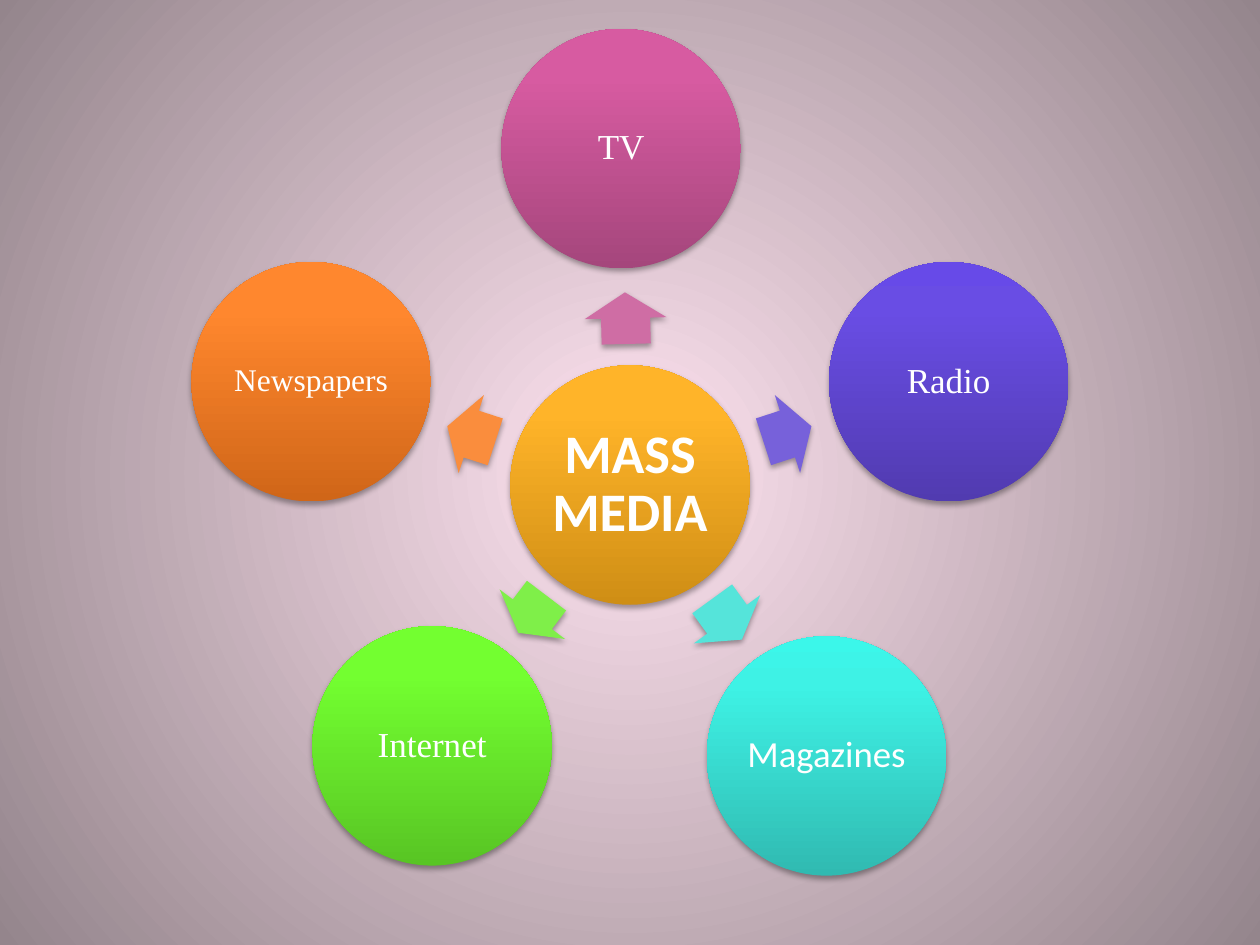
from pptx import Presentation
from pptx.dml.color import RGBColor
from pptx.enum.shapes import MSO_SHAPE
from pptx.enum.text import MSO_ANCHOR, PP_ALIGN
from pptx.oxml import parse_xml
from pptx.oxml.ns import nsdecls
from pptx.util import Inches, Pt

SERIF, SANS = "Times New Roman", "Calibri"
DIAMETER = 1.9
ARROW_HEIGHT = 0.65
HUB = ("MASS MEDIA", 4.05, 2.9, SANS, 31, ("CF8E15", "FFB429", "FFB52B"))
MEDIA = [
    (("TV", 3.98, 0.23, SERIF, 20, ("A5467C", "D75BA1", "DA59A2")),
     (4.76, 2.2, 0.41, 268.6, "CF6DA4")),
    (("Radio", 6.58, 2.08, SERIF, 20, ("513BB0", "694DE4", "674AE8")),
     (6.05, 3.12, 0.4, 342, "7761DA")),
    (("Magazines", 5.61, 5.05, SANS, 21, ("30BAB1", "3EF2E5", "3BF7EA")),
     (5.57, 4.59, 0.4, 54, "55E4DA")),
    (("Internet", 2.48, 4.97, SERIF, 20, ("58C524", "73FF30", "73FF31")),
     (4.04, 4.55, 0.37, 127.2, "7FEF49")),
    (("Newspapers", 1.52, 2.08, SERIF, 18, ("D06618", "FF872E", "FF8730")),
     (3.54, 3.12, 0.4, 198, "FA8D3D")),
]
UPWARD = '<a:lin ang="16200000" scaled="0"/>'
RADIAL = ('<a:path path="circle"><a:fillToRect l="50000" t="50000" '
          'r="50000" b="50000"/></a:path>')


def rgb(value):
    return RGBColor.from_string(value)


def gradient(stops, direction):
    marks = "".join(f'<a:gs pos="{pos * 1000}"><a:srgbClr val="{color}"/></a:gs>'
                    for pos, color in stops)
    return parse_xml(f'<a:gradFill {nsdecls("a")} rotWithShape="1">'
                     f'<a:gsLst>{marks}</a:gsLst>{direction}</a:gradFill>')


def add_shape(s, kind, left, top, width, height):
    sp = s.shapes.add_shape(kind, Inches(left), Inches(top),
                            Inches(width), Inches(height))
    sp.line.fill.background()
    sp._element.spPr.append(parse_xml(
        f'<a:effectLst {nsdecls("a")}><a:outerShdw blurRad="40000" dist="23000" '
        'dir="5400000" rotWithShape="0"><a:srgbClr val="000000">'
        '<a:alpha val="35000"/></a:srgbClr></a:outerShdw></a:effectLst>'))
    return sp


def add_circle(s, label, left, top, font, size, colors):
    sp = add_shape(s, MSO_SHAPE.OVAL, left, top, DIAMETER, DIAMETER)
    sp._element.spPr.insert(2, gradient(zip((0, 80, 100), colors), UPWARD))
    tf = sp.text_frame
    tf.word_wrap = True
    tf.vertical_anchor = MSO_ANCHOR.MIDDLE
    tf.margin_left = tf.margin_right = tf.margin_top = tf.margin_bottom = Inches(0.03)
    tf.text = label
    p = tf.paragraphs[0]
    p.alignment = PP_ALIGN.CENTER
    p.line_spacing = 0.9
    r = p.runs[0]
    r.font.name = font
    r.font.size = Pt(size)
    r.font.color.rgb = rgb("FFFFFF")
    return r


def add_arrow(s, left, top, width, angle, color):
    sp = add_shape(s, MSO_SHAPE.RIGHT_ARROW, left, top, width, ARROW_HEIGHT)
    sp.adjustments[0] = 0.6
    sp.adjustments[1] = 0.5
    sp.rotation = angle
    sp.fill.solid()
    sp.fill.fore_color.rgb = rgb(color)


prs = Presentation()
prs.slide_width, prs.slide_height = Inches(10), Inches(7.5)
s = prs.slides.add_slide(prs.slide_layouts[6])
bg = parse_xml(f'<p:bg {nsdecls("p", "a")}><p:bgPr><a:effectLst/></p:bgPr></p:bg>')
bg[0].insert(0, gradient([(0, "FFE3F0"), (100, "94858C")], RADIAL))
s._element.cSld.insert(0, bg)

add_circle(s, *HUB).font.bold = True
for circle, arrow in MEDIA:
    add_arrow(s, *arrow)
    add_circle(s, *circle)

prs.save("out.pptx")
